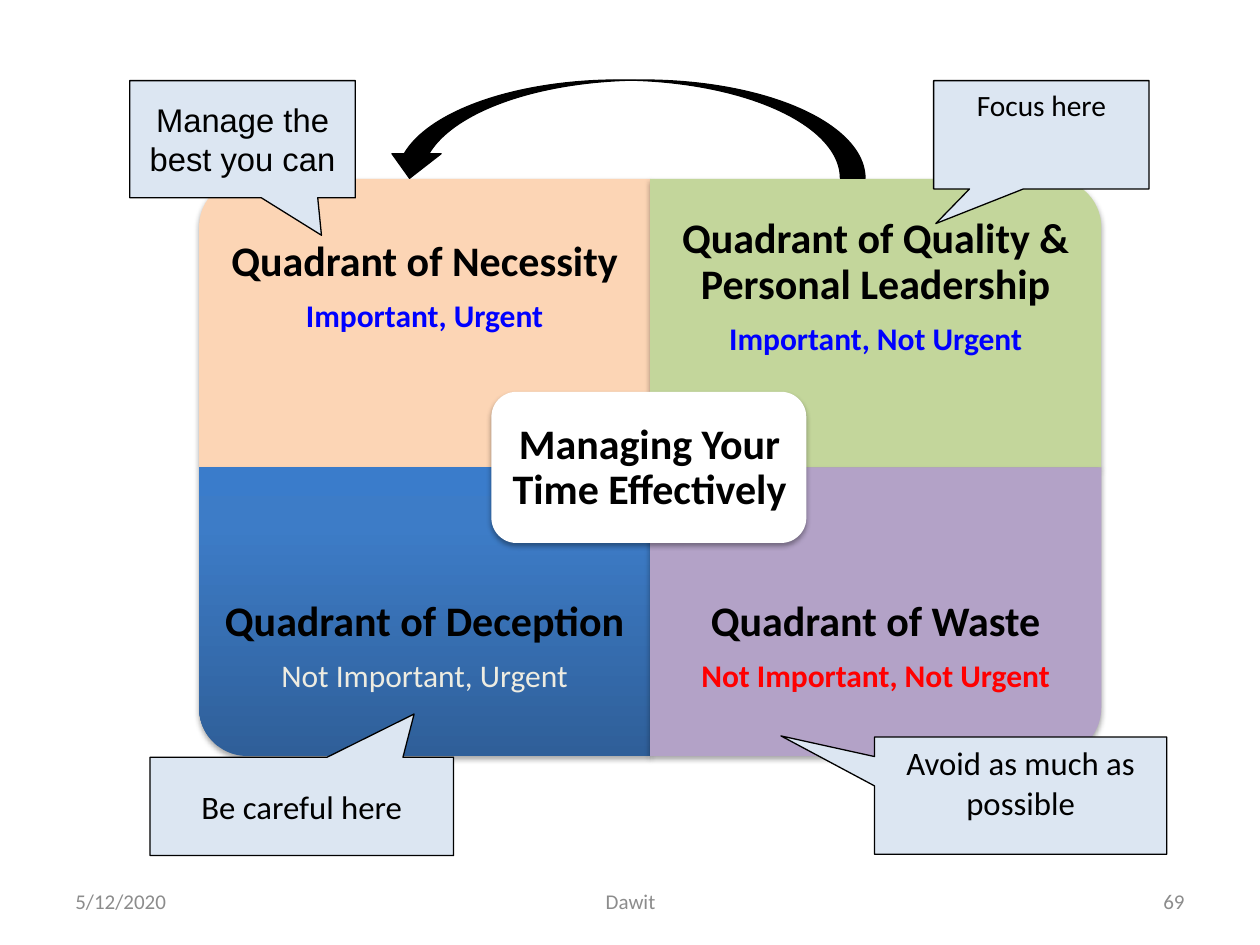
import copy
from dataclasses import dataclass

import lxml.etree
import pptx
import pptx.dml.color
import pptx.enum.shapes
import pptx.enum.text
import pptx.oxml.ns
import pptx.util

Inches = pptx.util.Inches
Pt = pptx.util.Pt
SHAPE = pptx.enum.shapes.MSO_SHAPE
ALIGN = pptx.enum.text.PP_ALIGN
ANCHOR = pptx.enum.text.MSO_ANCHOR
qn = pptx.oxml.ns.qn


@dataclass(frozen=True)
class Theme:
    font: str = "Calibri"
    alternate_font: str = "Arial"
    black: str = "000000"
    white: str = "FFFFFF"
    necessity: str = "FCD5B5"
    quality: str = "C3D69B"
    deception: tuple = ((0, "2F5F99"), (0.8, "3D7CC7"), (1, "3A7CCB"))
    waste: str = "B3A2C7"
    important: str = "0000FF"
    unimportant: str = "FF0000"
    pale: str = "EEECE1"
    callout: str = "DCE6F2"
    footer: str = "8C8C8C"
    title_size: float = 24
    subtitle_size: float = 18
    callout_size: float = 18.7
    small_callout_size: float = 16.8
    footer_size: float = 12


THEME = Theme()
LEFT, TOP = 1.58, 1.42
WIDTH, HEIGHT = 3.58, 2.29
LABEL_HEIGHT = 1.72


def rgb(color):
    return pptx.dml.color.RGBColor.from_string(color)


def fill_gradient(shape, stops):
    """Fill from bottom to top, whatever the shape's rotation."""
    shape.fill.gradient()
    shape.fill.gradient_angle = 90
    gradient = shape._element.spPr.find(qn("a:gradFill"))
    gradient.set("rotWithShape", "0")
    stop_list = gradient.find(qn("a:gsLst"))
    stop_list.append(copy.deepcopy(stop_list[-1]))
    for stop, (position, color) in zip(shape.fill.gradient_stops, stops):
        stop.position = position
        stop.color.rgb = rgb(color)


def add_soft_shadow(shape):
    effects = shape._element.spPr.find(qn("a:effectLst"))
    shadow = lxml.etree.SubElement(
        effects, qn("a:outerShdw"), blurRad=str(Pt(3.1)), dist=str(Pt(1.8)),
        dir="5400000", rotWithShape="0")
    color = lxml.etree.SubElement(shadow, qn("a:srgbClr"), val=THEME.black)
    lxml.etree.SubElement(color, qn("a:alpha"), val="35000")


def add_shape(shapes, kind, box, fill, outlined=False):
    shape = shapes.add_shape(kind, *map(Inches, box))
    shape.shadow.inherit = False
    if isinstance(fill, tuple):
        fill_gradient(shape, fill)
    else:
        shape.fill.solid()
        shape.fill.fore_color.rgb = rgb(fill)
    if outlined:
        shape.line.color.rgb = rgb(THEME.black)
        shape.line.width = Pt(0.75)
    else:
        shape.line.fill.background()
    return shape


def write_paragraph(paragraph, text, size, color, bold=False,
                    font=THEME.font, align=ALIGN.CENTER):
    paragraph.text = text
    paragraph.alignment = align
    paragraph.font.name = font
    paragraph.font.size = Pt(size)
    paragraph.font.bold = bold
    paragraph.font.color.rgb = rgb(color)


def add_text_box(shapes, box, inset=None):
    frame = shapes.add_textbox(*map(Inches, box)).text_frame
    frame.word_wrap = True
    frame.vertical_anchor = ANCHOR.MIDDLE
    if inset is not None:
        frame.margin_left = frame.margin_right = Inches(inset)
        frame.margin_top = frame.margin_bottom = Inches(inset)
    return frame


def add_label(shapes, box, inset, lines):
    """Add tightly spaced lines, each as (text, size, color, bold)."""
    frame = add_text_box(shapes, box, inset)
    for index, line in enumerate(lines):
        paragraph = frame.add_paragraph() if index else frame.paragraphs[0]
        write_paragraph(paragraph, *line)
        paragraph.line_spacing = 0.9
        paragraph.space_after = Pt(0.35 * line[1])


def add_quadrant(shapes, column, row, rotation, fill, title, subtitle, color, bold=True):
    left, top = LEFT + column * WIDTH, TOP + row * HEIGHT
    # A quarter turn swaps the sides around the same centre
    width, height = (HEIGHT, WIDTH) if rotation % 180 else (WIDTH, HEIGHT)
    box = (left + (WIDTH - width) / 2, top + (HEIGHT - height) / 2, width, height)
    shape = add_shape(shapes, SHAPE.ROUND_1_RECTANGLE, box, fill)
    shape.rotation = rotation
    add_soft_shadow(shape)
    label_top = top + row * (HEIGHT - LABEL_HEIGHT)
    add_label(shapes, (left, label_top, WIDTH, LABEL_HEIGHT), 0.19, [
        (title, THEME.title_size, THEME.black, True),
        (subtitle, THEME.subtitle_size, color, bold)])


def add_centre(shapes):
    shape = add_shape(shapes, SHAPE.ROUNDED_RECTANGLE, (3.9, 3.11, 2.5, 1.2), THEME.white)
    add_soft_shadow(shape)
    add_label(shapes, (3.96, 3.17, 2.39, 1.09), 0.1, [
        ("Managing Your Time Effectively", THEME.title_size, THEME.black, True)])


def add_callout(shapes, box, pointer, text, anchor=ANCHOR.MIDDLE,
                size=THEME.callout_size, font=THEME.font):
    shape = add_shape(shapes, SHAPE.RECTANGULAR_CALLOUT, box, THEME.callout, outlined=True)
    shape.adjustments[0], shape.adjustments[1] = pointer
    frame = shape.text_frame
    frame.word_wrap = True
    frame.vertical_anchor = anchor
    write_paragraph(frame.paragraphs[0], text, size, THEME.black, font=font)


def add_footer(shapes, left, width, text, align):
    frame = add_text_box(shapes, (left, 6.95, width, 0.4))
    write_paragraph(frame.paragraphs[0], text, THEME.footer_size, THEME.footer, align=align)


def main():
    presentation = pptx.Presentation()
    presentation.slide_width, presentation.slide_height = Inches(10), Inches(7.5)
    slide = presentation.slides.add_slide(presentation.slide_layouts[6])
    shapes = slide.shapes

    # Matrix of four quadrants with the topic in the middle
    matrix = shapes.add_group_shape().shapes
    add_quadrant(matrix, 0, 0, 270, THEME.necessity,
                 "Quadrant of Necessity", "Important, Urgent", THEME.important)
    add_quadrant(matrix, 1, 0, 0, THEME.quality, "Quadrant of Quality & Personal Leadership",
                 "Important, Not Urgent", THEME.important)
    add_quadrant(matrix, 0, 1, 180, THEME.deception,
                 "Quadrant of Deception", "Not Important, Urgent", THEME.pale, bold=False)
    add_quadrant(matrix, 1, 1, 90, THEME.waste,
                 "Quadrant of Waste", "Not Important, Not Urgent", THEME.unimportant)
    add_centre(matrix)

    # Advice for each quadrant
    add_callout(shapes, (1.03, 0.64, 1.79, 0.93), (0.35, 0.82),
                "Manage the best you can", font=THEME.alternate_font)
    add_callout(shapes, (7.41, 0.64, 1.71, 0.86), (-0.49, 0.82),
                "Focus here", ANCHOR.TOP, THEME.small_callout_size)
    add_callout(shapes, (6.94, 5.85, 2.32, 0.93), (-0.82, -0.51),
                "Avoid as much as possible", ANCHOR.TOP)
    add_callout(shapes, (1.19, 6.01, 2.41, 0.78), (0.37, -0.94), "Be careful here")

    # Arrow from quality back to necessity
    arrow = add_shape(shapes, SHAPE.CURVED_RIGHT_ARROW, (4.57, -0.88, 0.78, 3.81),
                      THEME.black, outlined=True)
    arrow.rotation = 90

    # Footer
    add_footer(shapes, 7.17, 2.33, "69", ALIGN.RIGHT)
    add_footer(shapes, 0.5, 2.33, "5/12/2020", ALIGN.LEFT)
    add_footer(shapes, 3.42, 3.17, "Dawit", ALIGN.CENTER)

    presentation.save("out.pptx")


if __name__ == "__main__":
    main()
